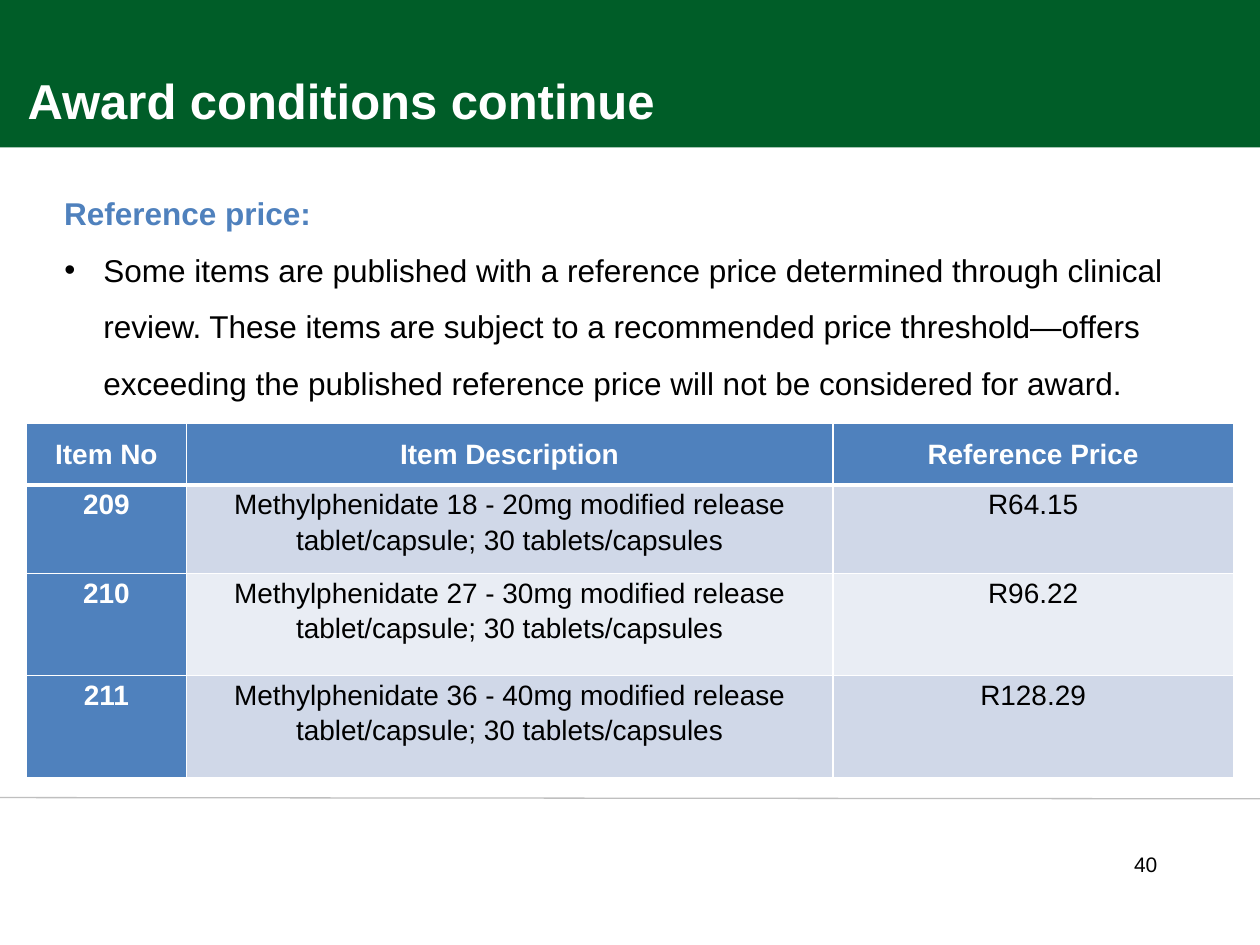
from dataclasses import dataclass

from lxml.etree import SubElement
from pptx import Presentation
from pptx.dml.color import RGBColor
from pptx.enum.shapes import MSO_CONNECTOR as Connector, MSO_SHAPE as Shape
from pptx.enum.text import MSO_ANCHOR as Anchor, MSO_AUTO_SIZE as AutoSize, PP_ALIGN as Align
from pptx.oxml.ns import qn
from pptx.util import Emu, Inches, Pt

# Content
TITLE = "Award conditions continue"
HEADING = "Reference price:"
BULLET = (
    "Some items are published with a reference price determined through clinical review. "
    "These items are subject to a recommended price threshold—offers exceeding the "
    "published reference price will not be considered for award."
)
HEADERS = ("Item No", "Item Description", "Reference Price")
ITEMS = [
    ("209", "Methylphenidate 18 - 20mg modified release tablet/capsule; 30 tablets/capsules", "R64.15"),
    ("210", "Methylphenidate 27 - 30mg modified release tablet/capsule; 30 tablets/capsules", "R96.22"),
    ("211", "Methylphenidate 36 - 40mg modified release tablet/capsule; 30 tablets/capsules", "R128.29"),
]
PAGE_NUMBER = "40 "

# Lengths in inches
WIDTH, HEIGHT = 10, 7.5
COLUMNS = (1.27, 5.13, 3.18)
ROWS = (0.49, 0.7, 0.81, 0.81)
TABLE_TOP = 3.36


@dataclass(frozen=True)
class Theme:
    font: str = "Arial"
    green: str = "005D28"
    blue: str = "4F81BD"
    bands: tuple = ("D0D8E8", "E9EDF4")
    rule: str = "BFBFBF"
    white: str = "FFFFFF"
    black: str = "000000"
    title: int = 28
    body: int = 18
    cell: int = 16
    number: int = 12


THEME = Theme()


def color(code):
    return RGBColor.from_string(code)


def place(shape, left, top, width, height):
    shape.left, shape.top = Inches(left), Inches(top)
    shape.width, shape.height = Inches(width), Inches(height)


def write(para, text, size, ink, bold=False, align=Align.LEFT, spacing=1.0):
    para.alignment, para.line_spacing = align, spacing
    para.space_before = Pt(0)
    span = para.add_run()
    span.text = text
    span.font.name, span.font.size, span.font.bold = THEME.font, Pt(size), bold
    span.font.color.rgb = color(ink)


def set_bullet(para, margin, indent, mark=None):
    props = para._p.get_or_add_pPr()
    props.set("marL", str(Inches(margin)))
    props.set("indent", str(Inches(indent)))
    if mark:
        SubElement(props, qn("a:buFont"), typeface=THEME.font)
        SubElement(props, qn("a:buChar"), char=mark)
    else:
        SubElement(props, qn("a:buNone"))


def set_borders(cell, top, bottom):
    props = cell._tc.get_or_add_tcPr()
    for position, (side, points) in enumerate((("L", 1), ("R", 1), ("T", top), ("B", bottom))):
        line = SubElement(props, qn(f"a:ln{side}"), w=str(Pt(points)))
        fill = SubElement(line, qn("a:solidFill"))
        SubElement(fill, qn("a:srgbClr"), val=THEME.white)
        props.insert(position, line)


def add_backdrop(page):
    band = page.shapes.add_shape(Shape.RECTANGLE, 0, 0, Inches(WIDTH), Inches(1.17))
    band.shadow.inherit = False
    band.fill.solid()
    band.fill.fore_color.rgb = color(THEME.green)
    band.line.fill.background()
    rule = page.shapes.add_connector(
        Connector.STRAIGHT, 0, Inches(6.33), Inches(WIDTH), Inches(6.34))
    rule.line.color.rgb = color(THEME.rule)
    rule.line.width = Pt(0.75)
    SubElement(rule.element.spPr, qn("a:effectLst"))
    # Behind the placeholders
    tree = band.element.getparent()
    tree.insert(2, band.element)
    tree.insert(3, rule.element)


def add_text(page):
    title, body = page.placeholders
    place(title, 0.12, 0, 7.48, 1.08)
    title.text_frame.vertical_anchor = Anchor.BOTTOM
    title.text_frame.auto_size = AutoSize.NONE
    write(title.text_frame.paragraphs[0], TITLE, THEME.title, THEME.white, bold=True)

    place(body, 0.03, 1.34, 9.87, 1.86)
    frame = body.text_frame
    frame.auto_size = AutoSize.SHAPE_TO_FIT_TEXT
    heading, point = frame.paragraphs[0], frame.add_paragraph()
    set_bullet(heading, 0.38, 0)
    write(heading, HEADING, THEME.body, THEME.blue, bold=True, spacing=1.5)
    set_bullet(point, 0.69, -0.31, "•")
    write(point, BULLET, THEME.body, THEME.black, spacing=1.5)

    number = page.shapes.add_textbox(0, 0, 0, 0)
    place(number, 4.13, 6.71, 5.2, 0.79)
    number.text_frame.word_wrap = True
    write(number.text_frame.paragraphs[0], PAGE_NUMBER, THEME.number, THEME.black, align=Align.RIGHT)


def add_price_table(page):
    width = sum(COLUMNS)
    frame = page.shapes.add_table(
        len(ROWS), len(COLUMNS), Inches((WIDTH - width) / 2), Inches(TABLE_TOP),
        Inches(width), Inches(sum(ROWS)))
    table = frame.table
    table.first_col = True
    for column, length in zip(table.columns, COLUMNS):
        column.width = Inches(length)
    for row, length in zip(table.rows, ROWS):
        row.height = Inches(length)
    for r, texts in enumerate([HEADERS, *ITEMS]):
        for c, text in enumerate(texts):
            cell = table.cell(r, c)
            strong = r == 0 or c == 0
            cell.margin_left = cell.margin_right = Inches(0.07)
            cell.margin_top = cell.margin_bottom = Emu(0)
            cell.fill.solid()
            cell.fill.fore_color.rgb = color(THEME.blue if strong else THEME.bands[(r - 1) % 2])
            set_borders(cell, top=3 if r == 1 else 1, bottom=3 if r == 0 else 1)
            write(cell.text_frame.paragraphs[0], text, THEME.cell,
                  THEME.white if strong else THEME.black, bold=strong,
                  align=Align.CENTER, spacing=1.5 if r == 0 else 1.15)


def main():
    deck = Presentation()
    deck.slide_width, deck.slide_height = Inches(WIDTH), Inches(HEIGHT)
    page = deck.slides.add_slide(deck.slide_layouts[1])
    add_backdrop(page)
    add_text(page)
    add_price_table(page)
    deck.save("out.pptx")


if __name__ == "__main__":
    main()
